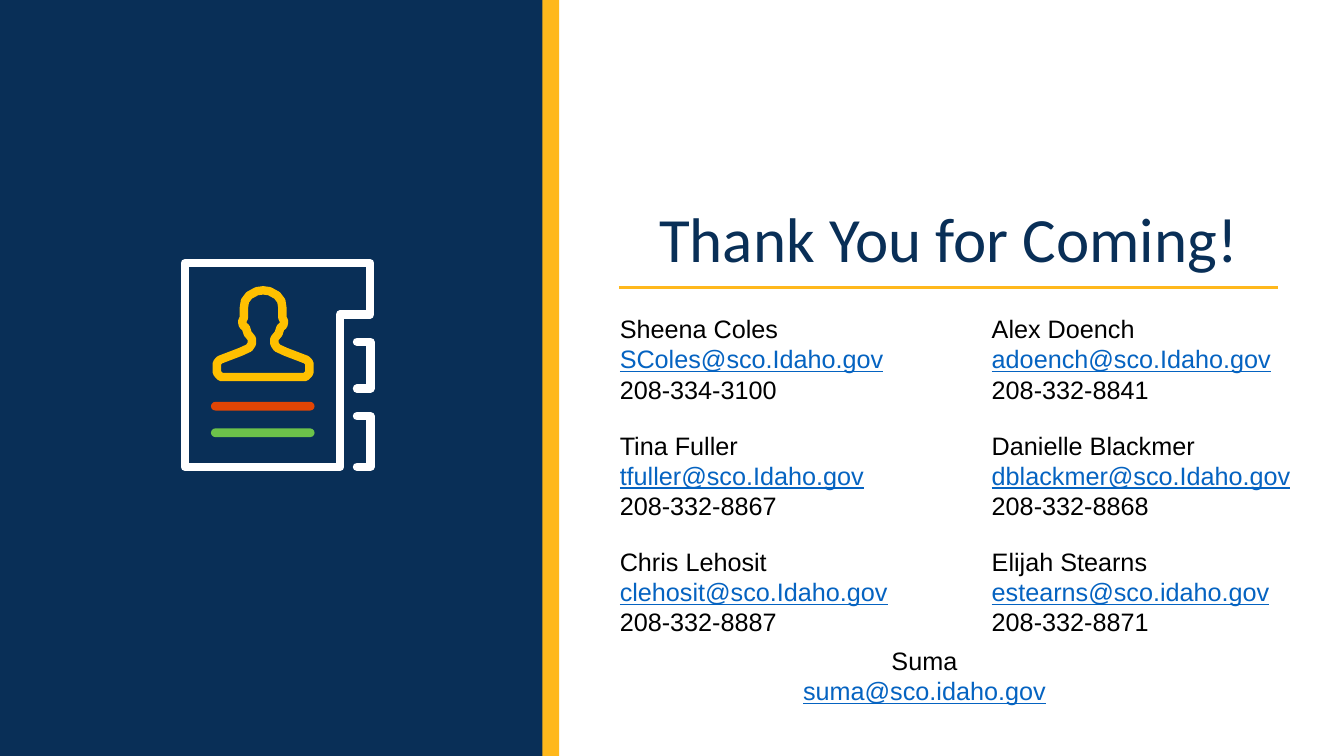
from lxml import etree
from pptx import Presentation
from pptx.dml.color import RGBColor
from pptx.enum.shapes import MSO_CONNECTOR as CONNECTOR, MSO_SHAPE as SHAPE
from pptx.enum.text import MSO_ANCHOR as ANCHOR, PP_ALIGN as ALIGN
from pptx.oxml.ns import qn
from pptx.util import Pt

NAVY, GOLD, WHITE, AMBER = "092F57", "FFB81C", "FFFFFF", "FFC000"
BLACK, LINK_BLUE, ORANGE, GREEN = "000000", "0563C1", "E14504", "6CC24A"


def paint(color_format, hex_string):
    """Apply a hex colour to a solid fill, a line fill or a font."""
    if hasattr(color_format, "solid"):
        color_format.solid()
        color_format = color_format.fore_color
    else:
        color_format = color_format.color
    color_format.rgb = RGBColor.from_string(hex_string)


deck = Presentation()
deck.slide_width, deck.slide_height = Pt(960), Pt(540)
page = deck.slides.add_slide(deck.slide_layouts[5])
shapes = page.shapes

# Side panel and the two bars of the contact card
blocks = [
    (SHAPE.RECTANGLE, 12, 0, 387.5, 540, GOLD),
    (SHAPE.RECTANGLE, 0, 0, 387.5, 540, NAVY),
    (SHAPE.ROUNDED_RECTANGLE, 150.7, 287, 74, 6.2, ORANGE),
    (SHAPE.ROUNDED_RECTANGLE, 150.7, 306, 74, 6.2, GREEN),
]
for kind, left, top, width, height, color in blocks:
    block = shapes.add_shape(kind, Pt(left), Pt(top), Pt(width), Pt(height))
    block.shadow.inherit = False
    paint(block.fill, color)
    block.line.fill.background()
    if kind == SHAPE.ROUNDED_RECTANGLE:
        block.adjustments[0] = 0.5

# Address book: card frame, two index tabs and a person, drawn as thick strokes
card_frame = [(264.5, 188), (132, 188), (132, 333.4), (243, 333.4), (243, 224.6), (264.5, 224.6)]
index_tabs = [
    [(255, top), (264.5, top), (264.5, bottom), (255, bottom)]
    for top, bottom in [(244.2, 277.6), (297.2, 333.4)]
]
AXIS = 188
half_person = [
    (0, 207.4), (4.5, 208), (10, 211), (13, 215), (13.7, 219.6), (13.7, 226.8),
    (15, 229.7), (14.4, 232.5), (12.4, 234), (11, 238.3), (8, 242), (8, 245.5),
    (10, 248.5), (16, 251.3), (31, 257), (33, 259.2), (33, 266.4), (30.3, 269.3),
]
person = [(AXIS + x, y) for x, y in half_person]
person += [(AXIS - x, y) for x, y in reversed(half_person[1:])]

strokes = [(card_frame, True, WHITE), (person, True, AMBER)]
strokes += [(tab, False, WHITE) for tab in index_tabs]
for points, closed, color in strokes:
    corners = [(Pt(x), Pt(y)) for x, y in points]
    builder = shapes.build_freeform(*corners[0])
    builder.add_line_segments(corners[1:], close=closed)
    stroke = builder.convert_to_shape()
    stroke.shadow.inherit = False
    stroke.fill.background()
    stroke.line.width = Pt(6)
    paint(stroke.line.fill, color)
    outline = stroke.line._get_or_add_ln()
    outline.set("cap", "rnd")
    etree.SubElement(outline, qn("a:round"))

# Title and the rule below it
title = shapes.title
title.left, title.top, title.width, title.height = Pt(422), Pt(142.5), Pt(511), Pt(60.5)
title.text_frame.text = "Thank You for Coming!"
title.text_frame.vertical_anchor = ANCHOR.MIDDLE
para = title.text_frame.paragraphs[0]
para.alignment = ALIGN.CENTER
para.line_spacing = 0.9
para.space_before = Pt(10)
title_font = para.runs[0].font
title_font.name, title_font.size = "Calibri", Pt(45)
paint(title_font, NAVY)

rule = shapes.add_connector(CONNECTOR.STRAIGHT, Pt(442), Pt(205.2), Pt(913), Pt(205.2))
rule.line.width = Pt(2.25)
paint(rule.line.fill, GOLD)
etree.SubElement(rule._element.spPr, qn("a:effectLst"))

# Contacts: two columns of three, and a shared address centred below
contact_columns = [
    (435.6, [
        ("Sheena Coles", "SColes@sco.Idaho.gov", "208-334-3100"),
        ("Tina Fuller", "tfuller@sco.Idaho.gov", "208-332-8867"),
        ("Chris Lehosit", "clehosit@sco.Idaho.gov", "208-332-8887"),
    ]),
    (701.3, [
        ("Alex Doench", "adoench@sco.Idaho.gov", "208-332-8841"),
        ("Danielle Blackmer", "dblackmer@sco.Idaho.gov", "208-332-8868"),
        ("Elijah Stearns", "estearns@sco.idaho.gov", "208-332-8871"),
    ]),
]
FIRST_ROW, ROW_PITCH = 220.3, 83.2
cards = [
    (left, FIRST_ROW + row * ROW_PITCH, ALIGN.LEFT, lines)
    for left, contacts in contact_columns
    for row, lines in enumerate(contacts)
]
cards.append((539.3, 457.2, ALIGN.CENTER, ("Suma", "suma@sco.idaho.gov")))

for left, top, alignment, lines in cards:
    box = shapes.add_textbox(Pt(left), Pt(top), Pt(242), Pt(8 + 21.6 * len(lines)))
    box.text_frame.word_wrap = True
    box.text_frame.text = "\n".join(lines)
    for para in box.text_frame.paragraphs:
        para.alignment = alignment
        is_address = "@" in para.text
        font = para.runs[0].font
        font.name, font.size = "Arial", Pt(18)
        font.underline = is_address
        paint(font, LINK_BLUE if is_address else BLACK)

deck.save("out.pptx")
